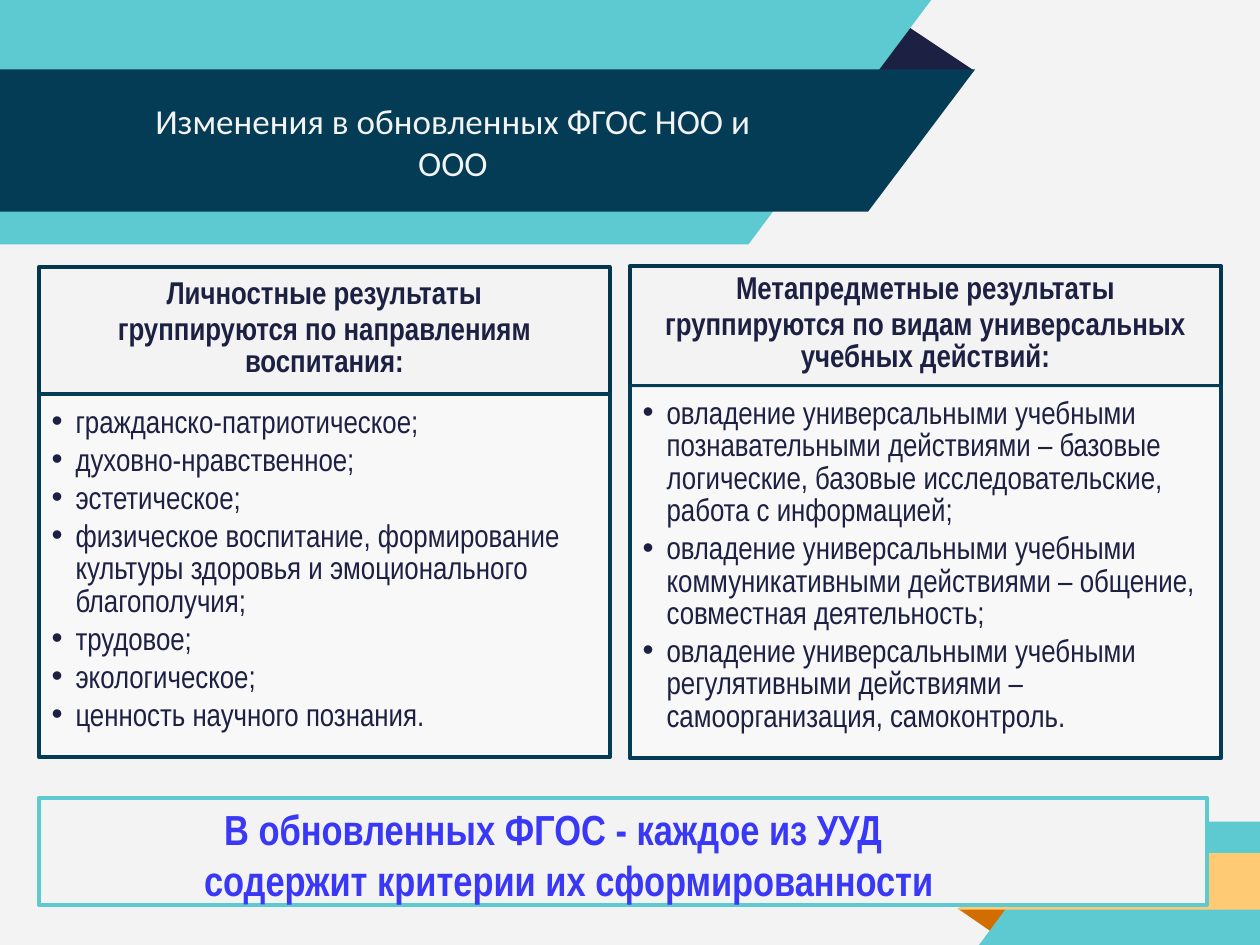
from lxml import etree
from pptx import Presentation
from pptx.dml.color import RGBColor
from pptx.enum.shapes import MSO_SHAPE
from pptx.enum.text import MSO_ANCHOR, PP_ALIGN
from pptx.oxml.ns import qn
from pptx.util import Inches, Pt

RECT = MSO_SHAPE.RECTANGLE
TOP, MIDDLE = MSO_ANCHOR.TOP, MSO_ANCHOR.MIDDLE
LEFT, CENTER = PP_ALIGN.LEFT, PP_ALIGN.CENTER

PAPER = RGBColor(0xF3, 0xF3, 0xF3)
PANEL = RGBColor(0xF9, 0xF9, 0xF9)
INK = RGBColor(0x1C, 0x20, 0x43)
NAVY = RGBColor(0x04, 0x3C, 0x56)
FRAME = RGBColor(0x04, 0x36, 0x4E)
TEAL = RGBColor(0x5D, 0xC9, 0xD1)
ORANGE = RGBColor(0xD2, 0x6E, 0x00)
SAND = RGBColor(0xFF, 0xCA, 0x73)
BLUE = RGBColor(0x38, 0x38, 0xF6)

# The slide is a grid of 100 columns by 75 rows
COLS, ROWS = 100, 75
BORDER = Pt(2.25)
NARROW = "Arial Narrow"

# Column cards: left, width, head top, head bottom, body bottom,
# head insets and side margin, body inset, head lines, body items.
# Each item: text, space before, line spacing, right margin.
CARDS = [
    dict(left=3.1, width=45.3, top=21.2, split=31.3, bottom=60.1,
         head_inset=0.5, head_margin=6, head_before=4, body_inset=0.6,
         head=["Личностные результаты",
               "группируются по направлениям воспитания:"],
         items=[("гражданско-патриотическое;", 4.3, 1.0, 0),
                ("духовно-нравственное;", 0.1, 1.0, 0),
                ("эстетическое;", 0.1, 1.0, 0),
                ("физическое воспитание, формирование культуры здоровья "
                 "и эмоционального благополучия;", 3.1, 0.86, 2),
                ("трудовое;", 0.1, 1.0, 0),
                ("экологическое;", 0.1, 1.0, 0),
                ("ценность научного познания.", 0.1, 1.0, 0)]),
    dict(left=50, width=46.9, top=21.1, split=30.6, bottom=60.2,
         head_inset=0.2, head_margin=2.5, head_before=1.8, body_inset=1,
         head=["Метапредметные результаты",
               "группируются по видам универсальных учебных действий:"],
         items=[("овладение универсальными учебными познавательными "
                 "действиями – базовые логические, базовые "
                 "исследовательские, работа с информацией;", 7.2, 0.86, 3),
                ("овладение универсальными учебными коммуникативными "
                 "действиями – общение, совместная деятельность;",
                 3.2, Pt(18.6), 0),
                ("овладение универсальными учебными регулятивными "
                 "действиями – самоорганизация, самоконтроль.",
                 2.9, 0.86, 5)]),
]


def u(cells):
    """Length of a number of grid cells."""
    return Inches(cells / 10)


def paint(sp, fill=None, line=None):
    sp.shadow.inherit = False
    if fill is None:
        sp.fill.background()
    else:
        sp.fill.solid()
        sp.fill.fore_color.rgb = fill
    if line is None:
        sp.line.fill.background()
    else:
        sp.line.color.rgb = line
        sp.line.width = BORDER


def add_polygon(slide, points, fill=None, line=None):
    start, *rest = [(u(x), u(y)) for x, y in points]
    builder = slide.shapes.build_freeform(*start)
    builder.add_line_segments(rest, close=True)
    paint(builder.convert_to_shape(), fill, line)


def set_frame(sp, inset, anchor=TOP):
    tf = sp.text_frame
    tf.word_wrap = True
    tf.vertical_anchor = anchor
    tf.margin_left = tf.margin_right = tf.margin_bottom = 0
    tf.margin_top = u(inset)
    return tf


def add_box(slide, left, top, width, height, inset, fill, line=None):
    sp = slide.shapes.add_shape(RECT, u(left), u(top), u(width), u(height))
    paint(sp, fill, line)
    return sp, set_frame(sp, inset)


def set_paragraph(p, text, size, color, font=NARROW, bold=False, align=LEFT,
                  before=0, spacing=1.0, margins=(0, 0), indent=0):
    p.text = text
    p.alignment = align
    p.space_before = Pt(before)
    p.line_spacing = spacing
    left, right = margins
    pPr = p._p.get_or_add_pPr()
    for name, cells in (("marL", left), ("marR", right), ("indent", indent)):
        pPr.set(name, str(int(u(cells))))
    for r in p.runs:
        r.font.size = Pt(size)
        r.font.name = font
        r.font.bold = bold
        r.font.color.rgb = color


def add_bullet(p):
    pPr = p._p.get_or_add_pPr()
    etree.SubElement(pPr, qn("a:buFont")).set("typeface", "Arial")
    etree.SubElement(pPr, qn("a:buChar")).set("char", "•")


def set_alpha(sp, percent):
    color = sp._element.spPr.find(qn("a:solidFill")).find(qn("a:srgbClr"))
    etree.SubElement(color, qn("a:alpha")).set("val", str(percent * 1000))


def paragraphs(tf, count):
    return [tf.paragraphs[0]] + [tf.add_paragraph() for _ in range(count - 1)]


def add_card(slide, card):
    left, width = card["left"], card["width"]
    top, split, bottom = card["top"], card["split"], card["bottom"]

    # Head with its frame
    right = left + width
    add_polygon(slide, [(left, split), (right, split), (right, top),
                        (left, top)], line=FRAME)
    _, tf = add_box(slide, left + 0.2, top + 0.2, width - 0.4,
                    split - top - 0.4, card["head_inset"], PAPER)
    side = card["head_margin"]
    styles = [(card["head_before"], 20.1, 0), (1.6, 18.6, side)]
    for p, text, (before, spacing, margin) in zip(
            paragraphs(tf, 2), card["head"], styles):
        set_paragraph(p, text, 18, INK, bold=True, align=CENTER,
                      before=before, spacing=Pt(spacing),
                      margins=(margin, margin))

    # Bulleted body
    sp, tf = add_box(slide, left, split, width, bottom - split,
                     card["body_inset"], PANEL, NAVY)
    set_alpha(sp, 90)
    items = card["items"]
    for p, (text, before, spacing, margin) in zip(
            paragraphs(tf, len(items)), items):
        set_paragraph(p, text, 18, INK, before=before, spacing=spacing,
                      margins=(2.9, margin), indent=-1.9)
        add_bullet(p)


def add_title(slide, text):
    sp = slide.shapes.add_textbox(u(9.8), u(9.4), u(52.3), u(3.6))
    tf = set_frame(sp, 0.1, MIDDLE)
    set_paragraph(tf.paragraphs[0], text, 20, PAPER, font="Calibri",
                  align=CENTER, before=1.1)


def add_summary(slide, text):
    _, tf = add_box(slide, 3.1, 63.3, 92.7, 8.5, 0.5, PAPER, TEAL)
    set_paragraph(tf.paragraphs[0], text, 24, BLUE, bold=True, before=3.2,
                  margins=(13.1, 17), indent=1.6)


def main():
    prs = Presentation()
    prs.slide_width, prs.slide_height = u(COLS), u(ROWS)
    slide = prs.slides.add_slide(prs.slide_layouts[6])

    # Background and title ribbon
    add_polygon(slide, [(0, 0), (COLS, 0), (COLS, ROWS), (0, ROWS)], PAPER)
    add_polygon(slide, [(71.6, 1.8), (68.8, 5.6), (77.3, 5.6)], INK)
    add_polygon(slide, [(0, 0), (73.9, 0), (59.4, 19.4), (0, 19.4)], TEAL)
    add_polygon(slide, [(0, 5.5), (77.4, 5.5), (68.9, 16.8), (0, 16.8)], NAVY)

    # Corner ribbon
    add_polygon(slide, [(80.3, 72.1), (76, 72.1), (78.9, 74.1)], ORANGE)
    add_polygon(slide, [(COLS, 65.2), (85, 65.2), (77.7, ROWS),
                        (COLS, ROWS)], TEAL)
    add_polygon(slide, [(COLS, 67.7), (79.3, 67.7), (76, 72.2),
                        (COLS, 72.2)], SAND)

    # Content
    add_title(slide, "Изменения в обновленных ФГОС НОО и ООО")
    for card in CARDS:
        add_card(slide, card)
    add_summary(slide, "В обновленных ФГОС - каждое из УУД "
                       "содержит критерии их сформированности")

    prs.save("out.pptx")


if __name__ == "__main__":
    main()
